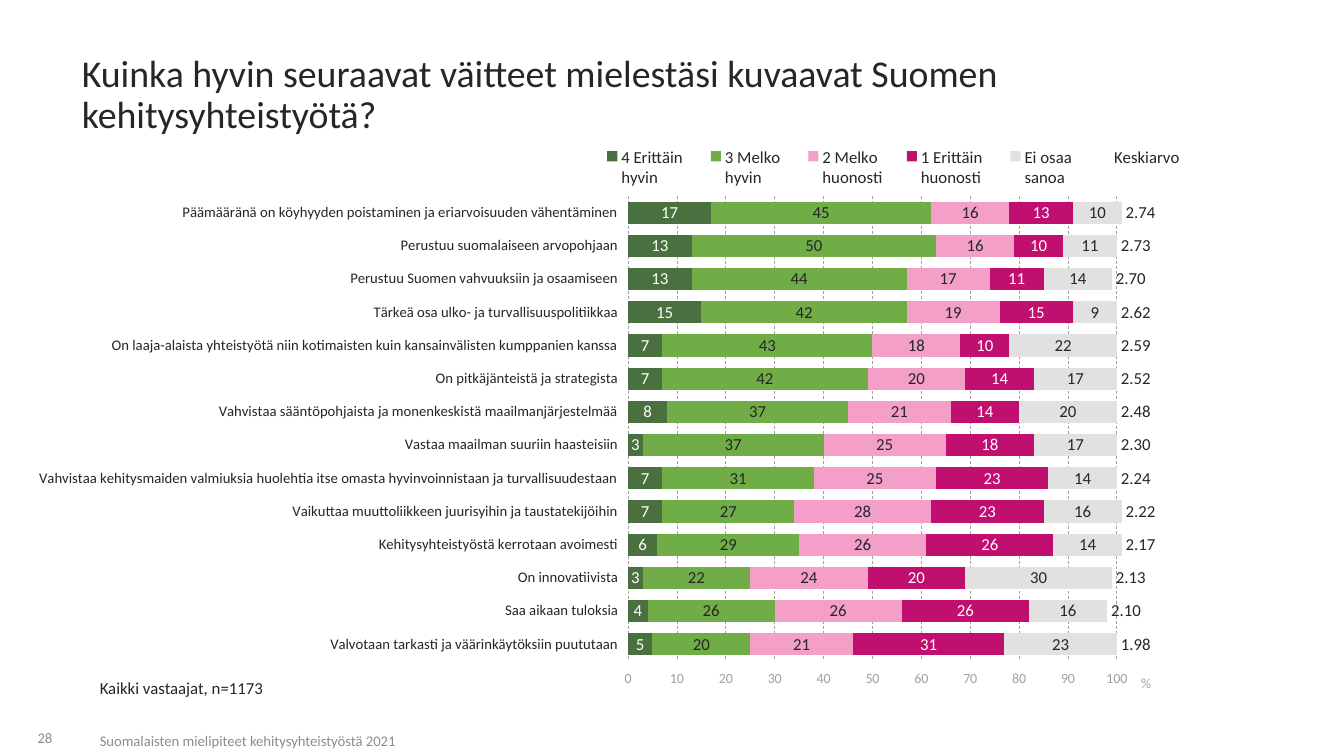
from lxml import etree
from pptx import Presentation
from pptx.chart.data import CategoryChartData
from pptx.dml.color import RGBColor
from pptx.enum import chart as chart_enum, dml, text
from pptx.oxml import ns
from pptx.util import Pt

FONT = "Calibri"
COLORS = {
    "dark": "262626", "footer": "8C8C8C", "axis": "A0A0A0", "white": "FFFFFF",
    "very well": "4A7040", "fairly well": "70AD47", "fairly badly": "F39FC7",
    "very badly": "C10F70", "no opinion": "E1E1E1",
}

CATEGORIES = [
    "Päämääränä on köyhyyden poistaminen ja eriarvoisuuden vähentäminen",
    "Perustuu suomalaiseen arvopohjaan",
    "Perustuu Suomen vahvuuksiin ja osaamiseen",
    "Tärkeä osa ulko- ja turvallisuuspolitiikkaa",
    "On laaja-alaista yhteistyötä niin kotimaisten kuin kansainvälisten kumppanien kanssa",
    "On pitkäjänteistä ja strategista",
    "Vahvistaa sääntöpohjaista ja monenkeskistä maailmanjärjestelmää",
    "Vastaa maailman suuriin haasteisiin",
    "Vahvistaa kehitysmaiden valmiuksia huolehtia itse omasta hyvinvoinnistaan ja turvallisuudestaan",
    "Vaikuttaa muuttoliikkeen juurisyihin ja taustatekijöihin",
    "Kehitysyhteistyöstä kerrotaan avoimesti",
    "On innovatiivista",
    "Saa aikaan tuloksia",
    "Valvotaan tarkasti ja väärinkäytöksiin puututaan",
]
# name, fill, label colour, values
SERIES = [
    ("4 Erittäin \nhyvin", "very well", "white",
     [17, 13, 13, 15, 7, 7, 8, 3, 7, 7, 6, 3, 4, 5]),
    ("3 Melko \nhyvin", "fairly well", "dark",
     [45, 50, 44, 42, 43, 42, 37, 37, 31, 27, 29, 22, 26, 20]),
    ("2 Melko \nhuonosti", "fairly badly", "dark",
     [16, 16, 17, 19, 18, 20, 21, 25, 25, 28, 26, 24, 26, 21]),
    ("1 Erittäin \nhuonosti", "very badly", "white",
     [13, 10, 11, 15, 10, 14, 14, 18, 23, 23, 26, 20, 26, 31]),
    ("Ei osaa \nsanoa", "no opinion", "dark",
     [10, 11, 14, 9, 22, 17, 20, 17, 14, 16, 14, 30, 16, 23]),
    ("Keskiarvo", None, "dark",
     [2.74, 2.73, 2.70, 2.62, 2.59, 2.52, 2.48, 2.30, 2.24, 2.22, 2.17, 2.13, 2.10, 1.98]),
]


def style(font, size, color):
    font.name, font.size, font.bold = FONT, Pt(size), False
    font.color.rgb = RGBColor.from_string(COLORS[color])


def place(element, index, **fractions):
    """Give a chart part a manual layout, in fractions of the chart area."""
    for old in element.findall(ns.qn("c:layout")):
        element.remove(old)
    layout = etree.Element(ns.qn("c:layout"))
    manual = etree.SubElement(layout, ns.qn("c:manualLayout"))
    settings = {"xMode": "edge", "yMode": "edge", **fractions}
    if element.tag == ns.qn("c:plotArea"):
        settings = {"layoutTarget": "inner", **settings}
    for name, value in settings.items():
        etree.SubElement(manual, ns.qn("c:" + name)).set("val", str(value))
    element.insert(index, layout)


presentation = Presentation()
presentation.slide_width, presentation.slide_height = Pt(960), Pt(540)
slide = presentation.slides.add_slide(presentation.slide_layouts[6])

# Chart
data = CategoryChartData()
data.categories = CATEGORIES
for name, fill, label_color, values in SERIES:
    data.add_series(name, values)
chart = slide.shapes.add_chart(chart_enum.XL_CHART_TYPE.BAR_STACKED,
                               Pt(2), Pt(91.2), Pt(854), Pt(411), data).chart
chart.has_title = False
style(chart.font, 12, "dark")
place(chart.plots[0]._element.getparent(), 0, x=0.523, y=0.119, w=0.413, h=0.808)

plot = chart.plots[0]
plot.gap_width, plot.overlap, plot.vary_by_categories = 50, 100, False
for series, (name, fill, label_color, values) in zip(plot.series, SERIES):
    labels = series.data_labels
    labels.show_value = True
    labels.number_format_is_linked = False
    style(labels.font, 12, label_color)
    if fill:
        series.format.fill.solid()
        series.format.fill.fore_color.rgb = RGBColor.from_string(COLORS[fill])
        labels.number_format = "#,##0"
    else:
        series.format.fill.background()
        labels.number_format = "#,##0.00"
        labels.position = chart_enum.XL_LABEL_POSITION.INSIDE_BASE

chart.has_legend = True
chart.legend.position = chart_enum.XL_LEGEND_POSITION.TOP
chart.legend.include_in_layout = False
style(chart.legend.font, 12, "dark")
place(chart.legend._element, 1, x=0.49, y=0.03, w=0.51, h=0.08)

statements, percent = chart.category_axis, chart.value_axis
for axis, size, color in [(statements, 10.5, "dark"), (percent, 10, "axis")]:
    axis.major_tick_mark = axis.minor_tick_mark = chart_enum.XL_TICK_MARK.NONE
    axis.format.line.fill.background()
    style(axis.tick_labels.font, size, color)
statements.reverse_order = True
statements.tick_label_position = chart_enum.XL_TICK_LABEL_POSITION.LOW
percent.tick_label_position = chart_enum.XL_TICK_LABEL_POSITION.HIGH

# Rounded shares add up to 101 in some rows; the scale keeps their means visible
percent.minimum_scale, percent.maximum_scale, percent.major_unit = 0, 101.01, 10
percent.tick_labels.number_format = "General"
percent.tick_labels.number_format_is_linked = False
percent.has_major_gridlines = True
gridline = percent.major_gridlines.format.line
gridline.width, gridline.dash_style = Pt(0.5), dml.MSO_LINE.DASH
gridline.color.rgb = RGBColor.from_string(COLORS["axis"])
axis_title = percent.axis_title
axis_title.text_frame.text = "%"
style(axis_title.text_frame.paragraphs[0].runs[0].font, 10, "axis")
place(axis_title._element, 1, x=0.95, y=0.945)

# Texts: wording, box, size, colour, anchor, alignment, line spacing
MIDDLE, BOTTOM, TOP = text.MSO_ANCHOR.MIDDLE, text.MSO_ANCHOR.BOTTOM, text.MSO_ANCHOR.TOP
LEFT, RIGHT = text.PP_ALIGN.LEFT, text.PP_ALIGN.RIGHT
TEXTS = [
    ("Kuinka hyvin seuraavat väitteet mielestäsi kuvaavat Suomen kehitysyhteistyötä?",
     (51.4, 31.4, 869, 74), 27, "dark", MIDDLE, LEFT, 0.9),
    ("Kaikki vastaajat, n=1173", (64.2, 482.4, 661, 20), 12, "dark", TOP, LEFT, 0.9),
    ("Suomalaisten mielipiteet kehitysyhteistyöstä 2021",
     (64.2, 517, 426, 21.6), 10.5, "footer", BOTTOM, LEFT, 1.0),
    ("28", (2, 515, 42.5, 21.6), 10.5, "footer", BOTTOM, RIGHT, 1.0),
]
for wording, box, size, color, anchor, alignment, spacing in TEXTS:
    frame = slide.shapes.add_textbox(*map(Pt, box)).text_frame
    frame.word_wrap, frame.vertical_anchor = True, anchor
    frame.text = wording
    paragraph = frame.paragraphs[0]
    paragraph.alignment, paragraph.line_spacing = alignment, spacing
    style(paragraph.runs[0].font, size, color)

presentation.save("out.pptx")
